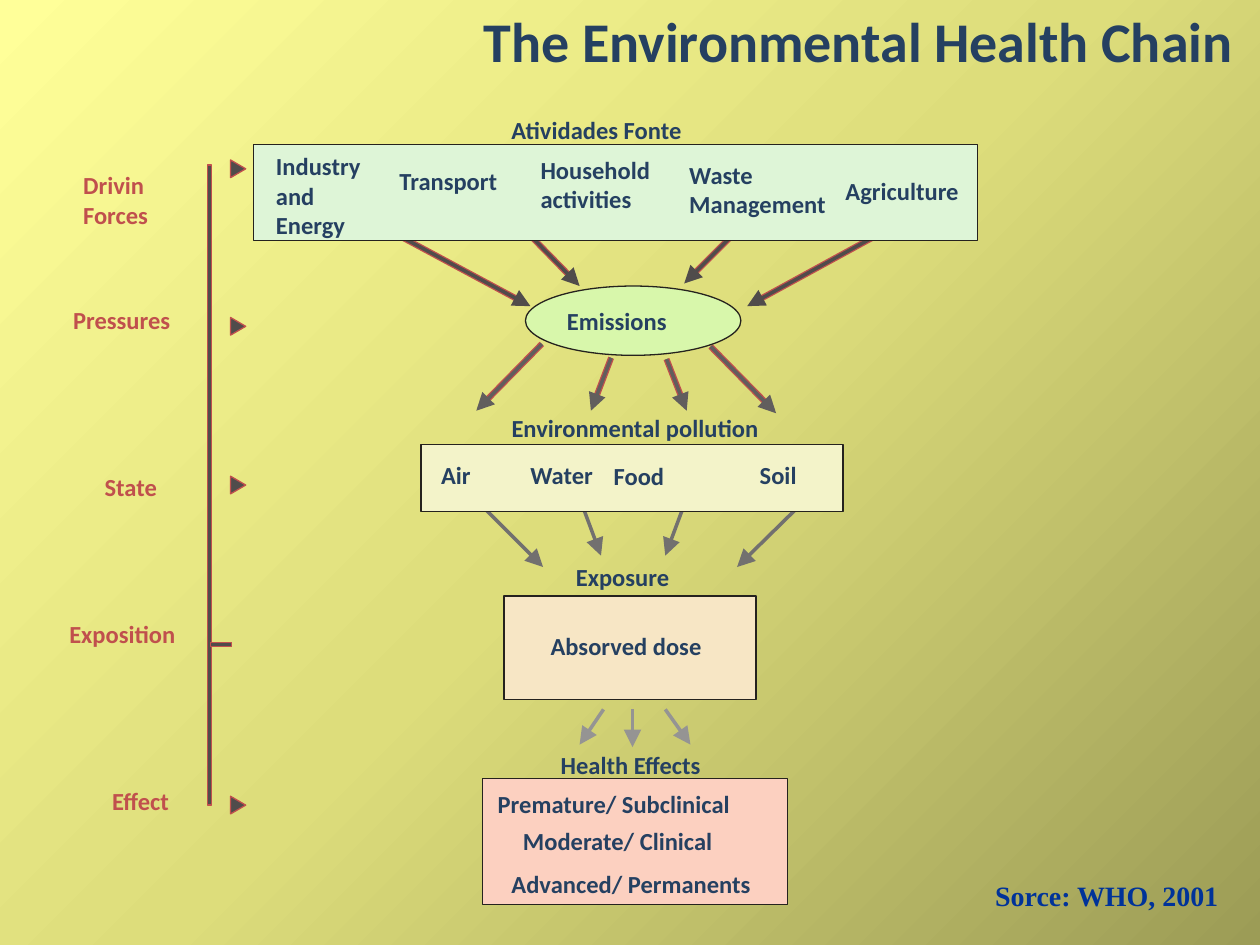
import copy
import math
from pptx import Presentation
from pptx import util as u
from pptx.dml import color
from pptx.enum import shapes, text
from pptx.oxml import ns
from lxml import etree

COLUMNS, ROWS = 100, 75
CELL = u.Inches(0.1)
NAVY, RED, DARK, OUTLINE = "254061", "C0504D", "504C4B", "25221E"
RECT, OVAL = shapes.MSO_SHAPE.RECTANGLE, shapes.MSO_SHAPE.OVAL

STAGES = [
    (RECT, 20.1, 11.5, 57.5, 7.6, "DEF5D7"),
    (OVAL, 41.7, 22.7, 17.1, 5.5, "D8F7AB"),
    (RECT, 33.4, 35.3, 33.5, 5.3, "F3F3C9"),
    (RECT, 40, 47.3, 20, 8.2, "F7E6C5"),
    (RECT, 38.3, 61.8, 24.2, 10, "FCD0C0"),
]
ARROWS = [
    (DARK, True, [(31.1, 18.4, 42.1, 24.3), (41.8, 18.4, 46, 22.7),
                  (58.5, 18.3, 54.3, 22.5), (70.1, 18.4, 59.3, 24.3)]),
    ("615E5D", True, [(43, 27.3, 37.8, 32.6), (48.5, 28.4, 46.9, 32.6),
                      (52.9, 28.5, 54.5, 32.6), (56.4, 27.5, 61.6, 32.8)]),
    ("72706F", False, [(37.8, 39.7, 43.1, 45), (46.1, 39.8, 47.7, 44.1),
                       (54.4, 39.8, 52.8, 44.1), (63.9, 39.7, 58.5, 45)]),
    ("959493", False, [(47.9, 56.3, 46, 59.1), (50.2, 56.3, 50.2, 59.3),
                       (52.8, 56.3, 54.8, 59.1)]),
]
LABELS = [
    ("Atividades Fonte", 40.6, 9.1, 15.7),
    ("Industry\nand\nEnergy", 21.9, 12, 7.2),
    ("Transport", 31.7, 13.2, 12.5),
    ("Household activities", 42.9, 12.3, 13),
    ("Waste Management", 54.7, 12.7, 11.1),
    ("Agriculture", 67.1, 14, 10.5),
    ("Emissions", 45, 24.3, 9.7),
    ("Environmental pollution", 40.6, 32.8, 19.8),
    ("Air", 35, 36.5, 2.8),
    ("Water", 42.1, 36.5, 5.4),
    ("Food", 48.7, 36.6, 4.5),
    ("Soil", 60.3, 36.5, 3.4),
    ("Exposure", 45.7, 44.6, 7.8),
    ("Absorved dose", 43.7, 50.1, 12.4),
    ("Health Effects", 44.5, 59.5, 11.5),
    ("Premature/ Subclinical", 39.5, 62.6, 18.9),
    ("Moderate/ Clinical", 41.5, 65.6, 15.5),
    ("Advanced/ Permanents", 40.6, 69, 19.4),
]
WRAPPED = {"Household activities", "Waste Management"}
STEPS = [
    ("Drivin\nForces", 6.6, 13.5, 6.4),
    ("Pressures", 5.8, 24.2, 9.5),
    ("State", 8.3, 37.5, 4.8),
    ("Exposition", 5.5, 49.1, 10),
    ("Effect", 8.9, 62.4, 5.4),
]
POINTER_ROWS = (13.4, 25.9, 38.5, 63.9)


def cells(*lengths):
    """Turn grid lengths into slide units."""
    return [round(length * CELL) for length in lengths]


def rgb(value):
    """Turn a hex string into a colour."""
    return color.RGBColor.from_string(value)


def paint(shape, fill, line, width):
    """Give a shape a flat fill and an outline."""
    shape.shadow.inherit = False
    shape.fill.solid()
    shape.fill.fore_color.rgb = rgb(fill)
    shape.line.color.rgb = rgb(line)
    shape.line.width = u.Pt(width)


def add_block(page, kind, area, fill, line=OUTLINE, width=0):
    """Add a preset shape on the grid."""
    paint(page.shapes.add_shape(kind, *cells(*area)), fill, line, width)


def add_backdrop(page):
    """Cover the page with a diagonal three-colour gradient."""
    backdrop = page.shapes.add_shape(RECT, *cells(0, 0, COLUMNS, ROWS))
    backdrop.shadow.inherit = False
    backdrop.line.fill.background()
    backdrop.fill.gradient()
    backdrop.fill.gradient_angle = 135
    first = backdrop.element.xpath(".//a:gs")[0]
    first.addnext(copy.deepcopy(first))
    stops = zip(backdrop.fill.gradient_stops, (0, 0.5, 1), ("9C9C56", "DDDD7B", "FFFF99"))
    for stop, position, value in stops:
        stop.position = position
        stop.color.rgb = rgb(value)


def add_line(page, ends, value, width, head=False):
    """Add a straight line, with an arrowhead at its end if wanted."""
    line = page.shapes.add_connector(shapes.MSO_CONNECTOR.STRAIGHT, *cells(*ends))
    line.line.color.rgb = rgb(value)
    line.line.width = u.Pt(width)
    if head:
        tail = etree.SubElement(line.line._get_or_add_ln(), ns.qn("a:tailEnd"))
        for name, setting in (("type", "triangle"), ("w", "lg"), ("len", "lg")):
            tail.set(name, setting)
    etree.SubElement(line.element.spPr, ns.qn("a:effectLst"))


def add_arrow(page, ends, value, edged):
    """Add an arrow whose shaft may have a red edge."""
    left, top, right, bottom = ends
    if edged:
        share = 1 - 1.3 / math.hypot(right - left, bottom - top)
        shaft = (left, top, left + share * (right - left), top + share * (bottom - top))
        add_line(page, shaft, RED, 3.5)
    add_line(page, ends, value, 2, head=True)


def add_pointer(page, row):
    """Add a triangle that points right from the timeline."""
    outline = page.shapes.build_freeform(*cells(18.3, row - 0.7))
    outline.add_line_segments([cells(19.5, row), cells(18.3, row + 0.7)], close=True)
    paint(outline.convert_to_shape(), DARK, RED, 0.75)


def add_label(page, words, area, value=NAVY, size=14, font="Calibri",
              align=text.PP_ALIGN.LEFT, wrap=False):
    """Add bold text in a box without margins."""
    box = page.shapes.add_textbox(*cells(*area))
    frame = box.text_frame
    frame.margin_left = frame.margin_right = frame.margin_top = frame.margin_bottom = 0
    frame.word_wrap = wrap
    frame.text = words
    for para in frame.paragraphs:
        para.alignment = align
        for span in para.runs:
            span.font.name = font
            span.font.size = u.Pt(size)
            span.font.bold = True
            span.font.color.rgb = rgb(value)


def add_timeline(page):
    """Add the bar at the left with its pointers and step names."""
    add_block(page, RECT, (16.5, 13.1, 0.3, 50.8), DARK, RED, 0.75)
    add_block(page, RECT, (16.7, 51, 1.7, 0.3), DARK, RED, 0.75)
    for row in POINTER_ROWS:
        add_pointer(page, row)
    for words, left, top, width in STEPS:
        add_label(page, words, (left, top, width, 2.4 * (1 + words.count("\n"))), RED)


def main():
    """Build and save the slide."""
    deck = Presentation()
    deck.slide_width, deck.slide_height = cells(COLUMNS, ROWS)
    page = deck.slides.add_slide(deck.slide_layouts[6])
    add_backdrop(page)
    for value, edged, group in ARROWS:
        for ends in group:
            add_arrow(page, ends, value, edged)
    for kind, *area, fill in STAGES:
        add_block(page, kind, area, fill)
    for words, left, top, width in LABELS:
        wrap = words in WRAPPED
        lines = 1 + words.count("\n") + wrap
        add_label(page, words, (left, top, width, 2.4 * lines), wrap=wrap)
    right = text.PP_ALIGN.RIGHT
    add_label(page, "The Environmental Health Chain", (28.1, 0.5, 69.8, 5.4),
              size=32, align=right, wrap=True)
    add_label(page, "Sorce: WHO, 2001", (78.7, 69.7, 18, 2.7), "003399", 16,
              "Times New Roman", right)
    add_timeline(page)
    deck.save("out.pptx")


if __name__ == "__main__":
    main()
